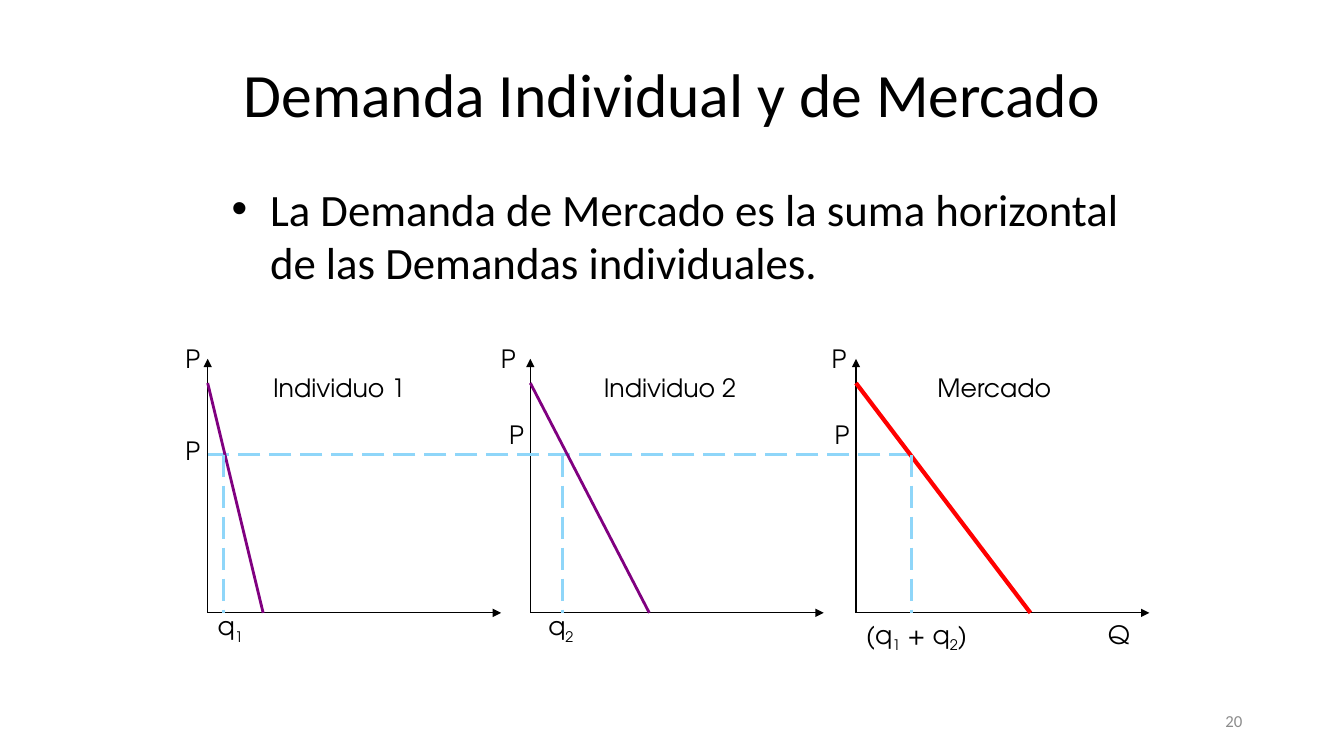
from dataclasses import dataclass

from lxml import etree
from pptx import Presentation
from pptx import util as u
from pptx.dml.color import RGBColor
from pptx.enum import dml, shapes, text
from pptx.oxml import ns
from pptx.shapes.connector import Connector
from pptx.slide import Slide
from pptx.text.text import _Paragraph as Paragraph


@dataclass(frozen=True)
class Theme:
    body_font: str = "Calibri"
    graph_font: str = "TeX Gyre Adventor"
    title_size: int = 44
    body_size: int = 32
    label_size: int = 18
    number_size: int = 12
    ink: str = "000000"
    muted: str = "8C8C8C"
    guide: str = "8FD6F9"
    individual: str = "800080"
    market: str = "FF0000"
    axis_width: float = 0.75
    curve_width: float = 2
    market_width: float = 3


@dataclass(frozen=True)
class Label:
    """Graph label; an underscore before a digit makes it a subscript."""
    words: str
    left: float
    top: float
    width: float


@dataclass(frozen=True)
class Graph:
    origin: float
    quantity: float
    intercept: float
    color: str
    width: float
    labels: tuple[Label, ...]


THEME = Theme()
AXIS_TOP, CURVE_TOP, PRICE, BASE = 3.56, 3.8, 4.51, 6.08
AXIS_LENGTH = 2.91
HEADING_TOP, AXIS_LABEL_TOP = 3.64, 3.36
HEADING_WIDTH, PRICE_WIDTH, QUANTITY_WIDTH = 1.57, 0.31, 0.47
LABEL_HEIGHT = 0.4

GRAPHS = (
    Graph(2.06, 2.22, 2.61, THEME.individual, THEME.curve_width, (
        Label("Individuo 1", 2.61, HEADING_TOP, HEADING_WIDTH),
        Label("P", 1.74, AXIS_LABEL_TOP, PRICE_WIDTH),
        Label("P", 1.74, 4.27, PRICE_WIDTH),
        Label("q_1", 2.06, 6.01, QUANTITY_WIDTH))),
    Graph(5.26, 5.58, 6.44, THEME.individual, THEME.curve_width, (
        Label("Individuo 2", 5.89, HEADING_TOP, HEADING_WIDTH),
        Label("P", 4.87, AXIS_LABEL_TOP, PRICE_WIDTH),
        Label("P", 4.95, 4.11, PRICE_WIDTH),
        Label("q_2", 5.34, 6.01, QUANTITY_WIDTH))),
    Graph(8.49, 9.04, 10.22, THEME.market, THEME.market_width, (
        Label("Mercado", 9.2, HEADING_TOP, HEADING_WIDTH),
        Label("P", 8.15, AXIS_LABEL_TOP, PRICE_WIDTH),
        Label("P", 8.18, 4.11, PRICE_WIDTH),
        Label("(q_1 + q_2)", 8.49, 6.09, HEADING_WIDTH),
        Label("Q", 10.89, 6.09, 0.63))),
)


def add_paragraph_box(page: Slide, left: float, top: float, width: float, height: float,
                      align: text.PP_ALIGN,
                      anchor: text.MSO_ANCHOR = text.MSO_ANCHOR.TOP) -> Paragraph:
    """Add a wrapping text box and return its only paragraph."""
    box = page.shapes.add_textbox(*map(u.Inches, (left, top, width, height)))
    box.text_frame.word_wrap = True
    box.text_frame.vertical_anchor = anchor
    para = box.text_frame.paragraphs[0]
    para.alignment = align
    return para


def add_span(para: Paragraph, words: str, size: int, font: str,
             color: str = THEME.ink, subscript: bool = False) -> None:
    span = para.add_run()
    span.text = words
    span.font.size = u.Pt(size)
    span.font.name = font
    span.font.color.rgb = RGBColor.from_string(color)
    if subscript:
        span.font._element.set("baseline", "-25000")


def add_bullet(para: Paragraph, indent: float) -> None:
    properties = para._p.get_or_add_pPr()
    properties.set("marL", str(u.Inches(indent)))
    properties.set("indent", str(u.Inches(-indent)))
    etree.SubElement(properties, ns.qn("a:buFont")).set("typeface", "Arial")
    etree.SubElement(properties, ns.qn("a:buChar")).set("char", "•")


def add_line(page: Slide, start: tuple[float, float], end: tuple[float, float],
             color: str, width: float) -> Connector:
    line = page.shapes.add_connector(
        shapes.MSO_CONNECTOR.STRAIGHT, *map(u.Inches, (*start, *end)))
    line.line.color.rgb = RGBColor.from_string(color)
    line.line.width = u.Pt(width)
    etree.SubElement(line._element.spPr, ns.qn("a:effectLst"))
    return line


def add_axis(page: Slide, origin: float, end: tuple[float, float]) -> None:
    axis = add_line(page, (origin, BASE), end, THEME.ink, THEME.axis_width)
    etree.SubElement(axis.line._get_or_add_ln(), ns.qn("a:tailEnd")).set("type", "triangle")


def add_guide(page: Slide, start: tuple[float, float], end: tuple[float, float]) -> None:
    guide = add_line(page, start, end, THEME.guide, THEME.curve_width)
    guide.line.dash_style = dml.MSO_LINE.LONG_DASH


def add_label(page: Slide, label: Label) -> None:
    para = add_paragraph_box(page, label.left, label.top, label.width, LABEL_HEIGHT,
                             text.PP_ALIGN.JUSTIFY)
    first, *rest = label.words.split("_")
    add_span(para, first, THEME.label_size, THEME.graph_font)
    for part in rest:
        add_span(para, part[0], THEME.label_size, THEME.graph_font, subscript=True)
        if part[1:]:
            add_span(para, part[1:], THEME.label_size, THEME.graph_font)


def add_graphs(page: Slide) -> None:
    for graph in GRAPHS:
        add_axis(page, graph.origin, (graph.origin, AXIS_TOP))
        add_axis(page, graph.origin, (graph.origin + AXIS_LENGTH, BASE))
    add_guide(page, (GRAPHS[-1].quantity, PRICE), (GRAPHS[0].origin, PRICE))
    for graph in GRAPHS:
        add_line(page, (graph.origin, CURVE_TOP), (graph.intercept, BASE),
                 graph.color, graph.width)
        add_guide(page, (graph.quantity, PRICE), (graph.quantity, BASE))
        for label in graph.labels:
            add_label(page, label)


def add_texts(page: Slide) -> None:
    number = add_paragraph_box(page, 9.42, 6.95, 3, 0.4, text.PP_ALIGN.RIGHT,
                               text.MSO_ANCHOR.MIDDLE)
    add_span(number, "20", THEME.number_size, THEME.body_font, THEME.muted)
    title = add_paragraph_box(page, 2.17, 0.3, 9, 1.25, text.PP_ALIGN.CENTER,
                              text.MSO_ANCHOR.MIDDLE)
    add_span(title, "Demanda Individual y de Mercado", THEME.title_size, THEME.body_font)
    body = add_paragraph_box(page, 2.2, 1.75, 9, 4.95, text.PP_ALIGN.JUSTIFY)
    add_bullet(body, 0.38)
    add_span(body, "La Demanda de Mercado es la suma horizontal de las Demandas individuales.",
             THEME.body_size, THEME.body_font)


def main() -> None:
    deck = Presentation()
    deck.slide_width, deck.slide_height = u.Inches(13.33), u.Inches(7.5)
    page = deck.slides.add_slide(deck.slide_layouts[6])
    add_texts(page)
    add_graphs(page)
    deck.save("out.pptx")


if __name__ == "__main__":
    main()
